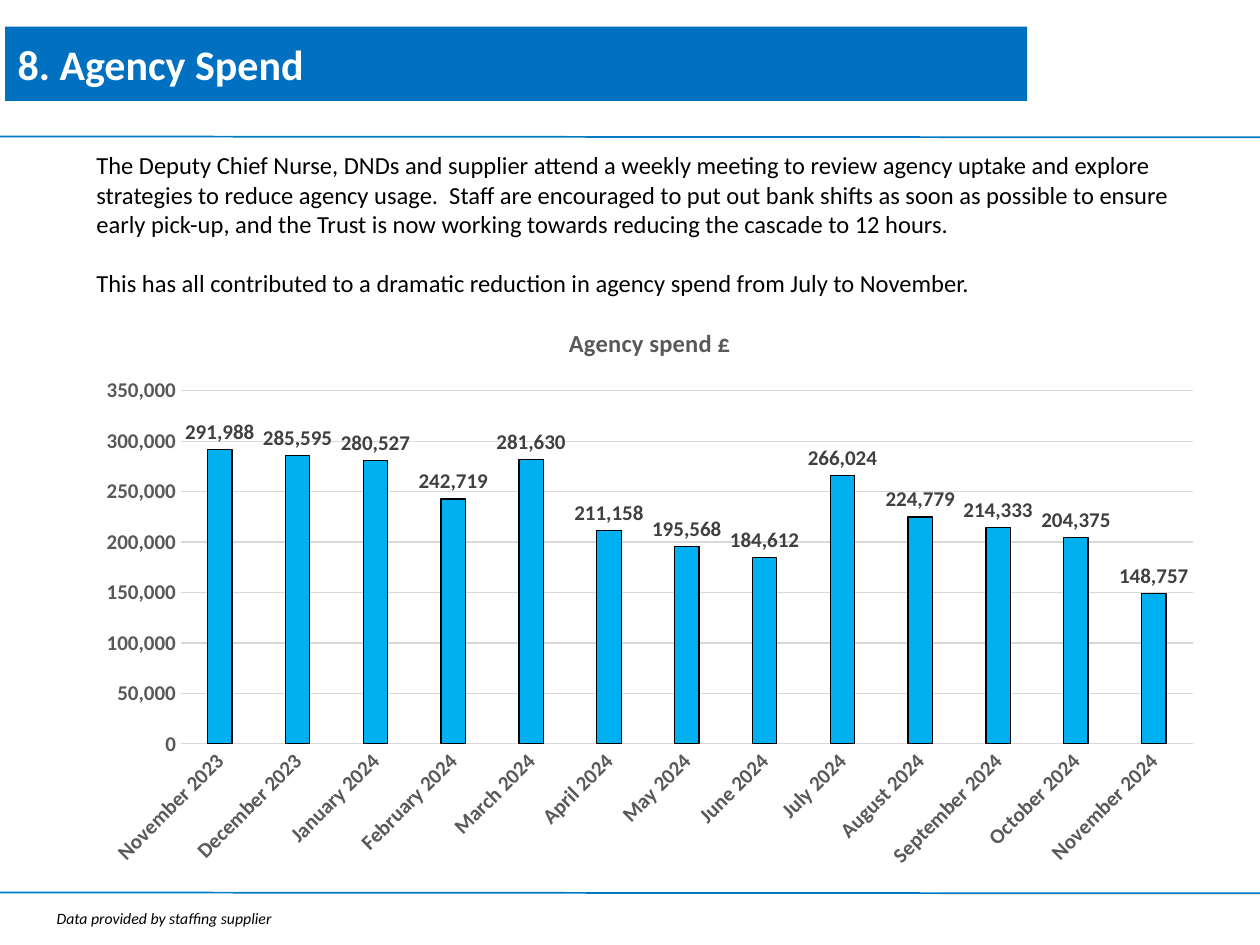
from pptx import Presentation
from pptx.chart.data import CategoryChartData
from pptx.dml.color import RGBColor
from pptx.enum.chart import XL_CHART_TYPE as ChartType
from pptx.enum.chart import XL_LABEL_POSITION as LabelPosition
from pptx.enum.chart import XL_TICK_MARK as TickMark
from pptx.enum.shapes import MSO_CONNECTOR as Connector
from pptx.enum.shapes import MSO_SHAPE as Shape
from pptx.enum.text import MSO_ANCHOR as Anchor
from pptx.enum.text import PP_ALIGN as Align
from pptx.oxml.ns import qn
from pptx.oxml.xmlchemy import OxmlElement
from pptx.util import Pt

FONT = "Calibri"
NUMBER_FORMAT = "#,##0"
COLOURS = {
    "rule": "007AC3",
    "banner": "0070C0",
    "bar": "00B0F0",
    "grid": "D9D9D9",
    "axis": "595959",
    "label": "404040",
    "black": "000000",
    "white": "FFFFFF",
}
SPEND = {
    "November 2023": 291988,
    "December 2023": 285595,
    "January 2024": 280527,
    "February 2024": 242719,
    "March 2024": 281630,
    "April 2024": 211158,
    "May 2024": 195568,
    "June 2024": 184612,
    "July 2024": 266024,
    "August 2024": 224779,
    "September 2024": 214333,
    "October 2024": 204375,
    "November 2024": 148757,
}
COMMENTARY = [
    "The Deputy Chief Nurse, DNDs and supplier attend a weekly meeting to review "
    "agency uptake and explore strategies to reduce agency usage.  Staff are "
    "encouraged to put out bank shifts as soon as possible to ensure early "
    "pick-up, and the Trust is now working towards reducing the cascade to "
    "12 hours.",
    "This has all contributed to a dramatic reduction in agency spend from "
    "July to November.",
]


def colour(name):
    return RGBColor.from_string(COLOURS[name])


def style_font(font, size, colour_name, bold=False, italic=False):
    font.name = FONT
    font.size = Pt(size)
    font.bold = bold
    font.italic = italic
    font.color.rgb = colour(colour_name)


def style_line(line, colour_name, width=0.75):
    line.color.rgb = colour(colour_name)
    line.width = Pt(width)


def add_rule(slide, top):
    rule = slide.shapes.add_connector(
        Connector.STRAIGHT, Pt(0), Pt(top), Pt(720), Pt(top + 0.5))
    style_line(rule.line, "rule", 1)
    rule._element.spPr.append(OxmlElement("a:effectLst"))


def add_banner(slide, text):
    banner = slide.shapes.add_shape(
        Shape.RECTANGLE, Pt(3), Pt(15.25), Pt(584), Pt(42.5))
    banner.shadow.inherit = False
    banner.fill.solid()
    banner.fill.fore_color.rgb = colour("banner")
    banner.line.fill.background()
    banner.text_frame.vertical_anchor = Anchor.MIDDLE
    paragraph = banner.text_frame.paragraphs[0]
    paragraph.alignment = Align.LEFT
    run = paragraph.add_run()
    run.text = text
    style_font(run.font, 24, "white", bold=True)


def add_text(slide, box, texts, size, gap=0, italic=False):
    frame = slide.shapes.add_textbox(*map(Pt, box)).text_frame
    frame.word_wrap = True
    for index, text in enumerate(texts):
        paragraph = frame.add_paragraph() if index else frame.paragraphs[0]
        if index:
            paragraph.space_before = Pt(gap)
        run = paragraph.add_run()
        run.text = text
        style_font(run.font, size, "black", italic=italic)


def style_axis(axis):
    axis.major_tick_mark = TickMark.NONE
    axis.minor_tick_mark = TickMark.NONE
    style_font(axis.tick_labels.font, 12, "axis", bold=True)


def add_spend_chart(slide, box):
    data = CategoryChartData(number_format=NUMBER_FORMAT)
    data.categories = list(SPEND)
    data.add_series("Series 1", list(SPEND.values()))
    chart = slide.shapes.add_chart(
        ChartType.COLUMN_CLUSTERED, *map(Pt, box), data).chart
    chart.has_legend = False
    style_font(chart.font, 12, "black", bold=True)

    # Title
    chart.has_title = True
    run = chart.chart_title.text_frame.paragraphs[0].add_run()
    run.text = "Agency spend £"
    style_font(run.font, 14, "axis", bold=True)
    chart.chart_title.include_in_layout = False

    # Axes
    months, pounds = chart.category_axis, chart.value_axis
    style_axis(months)
    style_axis(pounds)
    style_line(months.format.line, "grid")
    months._element.find(qn("c:txPr")).find(qn("a:bodyPr")).set("rot", "-2700000")
    pounds.format.line.fill.background()
    style_line(pounds.major_gridlines.format.line, "grid")
    pounds.minimum_scale, pounds.maximum_scale = 0, 350000
    pounds.major_unit = 50000
    pounds.tick_labels.number_format = NUMBER_FORMAT
    pounds.tick_labels.number_format_is_linked = False

    # Columns and their labels
    plot = chart.plots[0]
    plot.gap_width, plot.overlap = 219, -27
    plot.vary_by_categories = False
    series = plot.series[0]
    series.format.fill.solid()
    series.format.fill.fore_color.rgb = colour("bar")
    style_line(series.format.line, "black")
    labels = series.data_labels
    labels.show_value = True
    labels.position = LabelPosition.OUTSIDE_END
    labels.number_format = NUMBER_FORMAT
    labels.number_format_is_linked = False
    style_font(labels.font, 12, "label", bold=True)


def main():
    presentation = Presentation()
    presentation.slide_width, presentation.slide_height = Pt(720), Pt(540)
    slide = presentation.slides.add_slide(presentation.slide_layouts[6])

    # Header and footer rules
    for top in (78, 510):
        add_rule(slide, top)

    # Heading, source and commentary
    add_banner(slide, "8. Agency Spend")
    add_text(slide, (25.25, 515.5, 170, 18),
             ["Data provided by staffing supplier"], 9, italic=True)
    add_text(slide, (48, 82.25, 646.5, 109), COMMENTARY, 14, gap=17)

    # Monthly spend
    add_spend_chart(slide, (48, 173.5, 646.5, 329))

    presentation.save("out.pptx")


if __name__ == "__main__":
    main()
